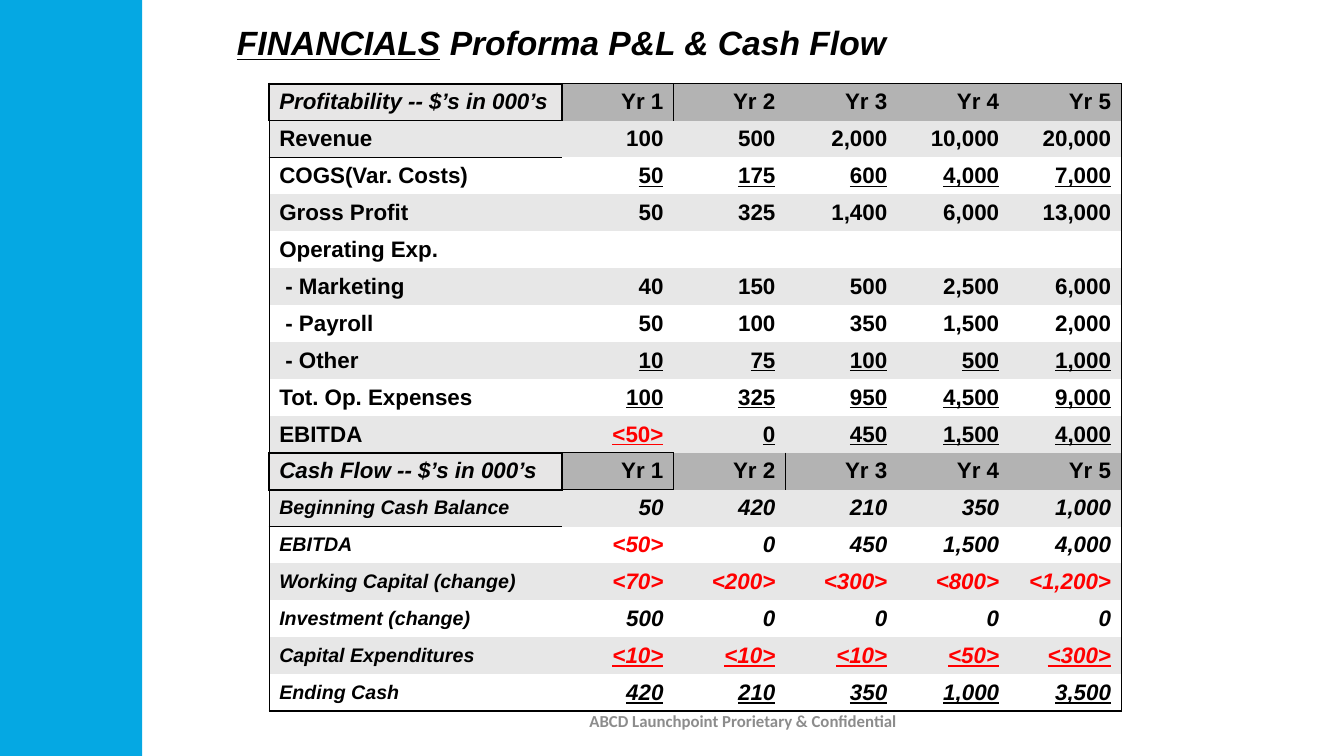
from lxml import etree
from pptx import Presentation
from pptx.dml.color import RGBColor
from pptx.enum.shapes import MSO_SHAPE
from pptx.enum.text import MSO_ANCHOR, PP_ALIGN
from pptx.oxml.ns import qn
from pptx.util import Inches, Pt

BLACK = RGBColor(0x00, 0x00, 0x00)
RED = RGBColor(0xFF, 0x00, 0x00)
WHITE = RGBColor(0xFF, 0xFF, 0xFF)
BLUE = RGBColor(0x05, 0xA8, 0xE3)
LABEL_GRAY = RGBColor(0xE7, 0xE6, 0xE6)
BAND_GRAY = RGBColor(0xE7, 0xE7, 0xE7)
YEAR_GRAY = RGBColor(0xB3, 0xB3, 0xB3)
FOOTER_GRAY = RGBColor(0x8C, 0x8C, 0x8C)
NO_STYLE = "{2D5ABB26-0587-4C30-8999-92F81FD0307C}"

YEARS = ["Yr 1", "Yr 2", "Yr 3", "Yr 4", "Yr 5"]
ROWS = [
    ["Profitability -- $’s in 000’s", *YEARS],
    ["Revenue", "100", "500", "2,000", "10,000", "20,000"],
    ["COGS(Var. Costs)", "50", "175", "600", "4,000", "7,000"],
    ["Gross Profit", "50", "325", "1,400", "6,000", "13,000"],
    ["Operating Exp.", "", "", "", "", ""],
    ["- Marketing", "40", "150", "500", "2,500", "6,000"],
    ["- Payroll", "50", "100", "350", "1,500", "2,000"],
    ["- Other", "10", "75", "100", "500", "1,000"],
    ["Tot. Op. Expenses", "100", "325", "950", "4,500", "9,000"],
    ["EBITDA", "<50>", "0", "450", "1,500", "4,000"],
    ["Cash Flow -- $’s in 000’s", *YEARS],
    ["Beginning Cash Balance", "50", "420", "210", "350", "1,000"],
    ["EBITDA", "<50>", "0", "450", "1,500", "4,000"],
    ["Working Capital (change)", "<70>", "<200>", "<300>", "<800>", "<1,200>"],
    ["Investment (change)", "500", "0", "0", "0", "0"],
    ["Capital Expenditures", "<10>", "<10>", "<10>", "<50>", "<300>"],
    ["Ending Cash", "420", "210", "350", "1,000", "3,500"],
]
CASH = 10
HEADERS = (0, CASH)
UNDERLINED = (2, 7, 8, 9, 15, 16)
LAST_ROW, LAST_COL = len(ROWS) - 1, len(YEARS)


def add_text(p, text, size=16, color=BLACK, font="Arial", italic=False,
             underline=False, align=PP_ALIGN.LEFT):
    p.alignment = align
    r = p.add_run()
    r.text = text
    r.font.name = font
    r.font.size = Pt(size)
    r.font.bold = True
    r.font.italic = italic
    r.font.underline = underline
    r.font.color.rgb = color


def add_border(cell, side, width):
    """Draw one cell edge; side is L, R, T or B, and width is in points."""
    ln = etree.SubElement(cell._tc.get_or_add_tcPr(), qn(f"a:ln{side}"), w=str(Pt(width)))
    fill = etree.SubElement(ln, qn("a:solidFill"))
    etree.SubElement(fill, qn("a:srgbClr"), val=str(BLACK))


prs = Presentation()
prs.slide_width, prs.slide_height = Inches(13.33), Inches(7.5)
slide = prs.slides.add_slide(prs.slide_layouts[5])

# Side band
sp = slide.shapes.add_shape(MSO_SHAPE.RECTANGLE, 0, 0, Inches(1.41), prs.slide_height)
sp.shadow.inherit = False
sp.fill.solid()
sp.fill.fore_color.rgb = BLUE
sp.line.fill.background()

# Title
title = slide.shapes.title
title.left, title.top = Inches(2.25), Inches(0.17)
title.width, title.height = Inches(9.42), Inches(0.51)
tf = title.text_frame
tf.vertical_anchor = MSO_ANCHOR.TOP
add_text(tf.paragraphs[0], "FINANCIALS", size=24, italic=True, underline=True)
add_text(tf.paragraphs[0], " Proforma P&L & Cash Flow", size=24, italic=True)

# Profit and cash flow table
frame = slide.shapes.add_table(len(ROWS), LAST_COL + 1, Inches(2.67), Inches(0.83),
                               Inches(8.45), Inches(6.23))
table = frame.table
table.first_row = table.horz_banding = False
table._tbl.tblPr.find(qn("a:tableStyleId")).text = NO_STYLE
for c, column in enumerate(table.columns):
    column.width = Inches(1.11 if c else 2.9)

for r, row in enumerate(ROWS):
    header = r in HEADERS
    for c, text in enumerate(row):
        cell = table.cell(r, c)
        cell.vertical_anchor = MSO_ANCHOR.MIDDLE
        label = c == 0
        first_cash_year = (r, c) == (CASH, 1)

        if header and label:
            borders = dict.fromkeys("LRTB", 1.5)
        else:
            borders = {}
            if label or (r, c) == (CASH, 2):
                borders["L"] = 1
            elif header and c == 1:
                borders["L"] = 1.5
            if c == LAST_COL or first_cash_year:
                borders["R"] = 1
            if r == 0 or first_cash_year:
                borders["T"] = 1
            elif label and r - 1 in HEADERS:
                borders["T"] = 1.5
            if r == LAST_ROW or (r, c) == (CASH - 1, 1):
                borders["B"] = 1
            elif label and r + 1 == CASH:
                borders["B"] = 1.5
        for side, width in borders.items():
            add_border(cell, side, width)

        cell.fill.solid()
        if header:
            cell.fill.fore_color.rgb = LABEL_GRAY if label else YEAR_GRAY
        else:
            cell.fill.fore_color.rgb = BAND_GRAY if r % 2 else WHITE

        if not text:
            cell.margin_top = cell.margin_bottom = 0
            continue
        if text.startswith("-"):
            cell.margin_left = Inches(0.16)
        add_text(cell.text_frame.paragraphs[0], text,
                 size=14 if label and r > CASH else 16,
                 color=RED if text.startswith("<") else BLACK,
                 italic=label if header else r > CASH,
                 underline=not label and r in UNDERLINED,
                 align=PP_ALIGN.LEFT if label else PP_ALIGN.RIGHT)

# Footer
footer = slide.shapes.add_textbox(Inches(5.12), Inches(6.95), Inches(4.5), Inches(0.4))
tf = footer.text_frame
tf.word_wrap = True
tf.vertical_anchor = MSO_ANCHOR.MIDDLE
add_text(tf.paragraphs[0], "ABCD Launchpoint Prorietary & Confidential", size=12,
         color=FOOTER_GRAY, font="Calibri", align=PP_ALIGN.CENTER)

prs.save("out.pptx")
